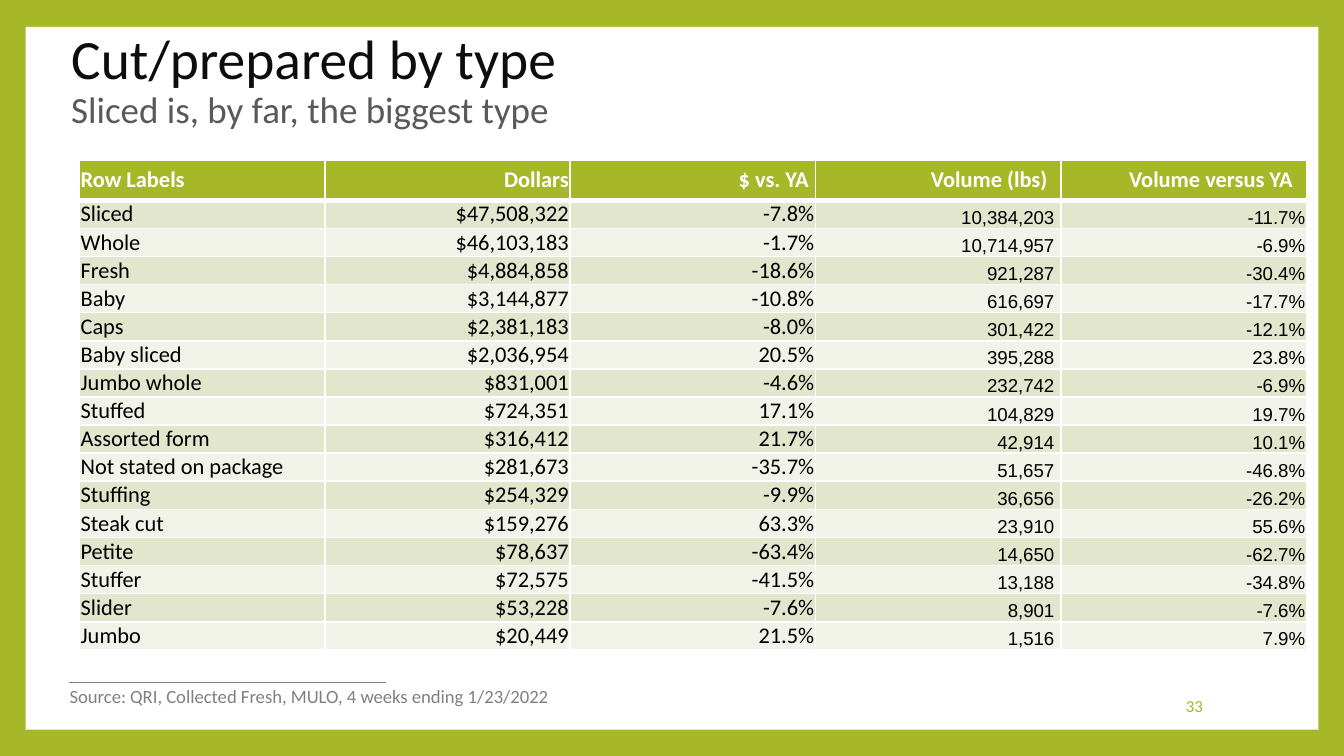
from lxml.etree import SubElement
from pptx import Presentation
from pptx.dml.color import RGBColor
from pptx.enum.shapes import MSO_CONNECTOR, MSO_SHAPE
from pptx.enum.text import MSO_ANCHOR, MSO_AUTO_SIZE, PP_ALIGN
from pptx.oxml.ns import qn
from pptx.util import Inches, Pt

COLORS = {
    "green": "A6B727",
    "white": "FFFFFF",
    "title": "0D0D0D",
    "subtitle": "595959",
    "source": "808080",
    "body": "000000",
    "odd_row": "E1E6CD",
    "even_row": "F1F3E8",
}

HEADERS = ["Row Labels", "Dollars", "$ vs. YA", "Volume (lbs)", "Volume versus YA"]
TYPES = [
    ("Sliced", "$47,508,322", "-7.8%", "10,384,203", "-11.7%"),
    ("Whole", "$46,103,183", "-1.7%", "10,714,957", "-6.9%"),
    ("Fresh", "$4,884,858", "-18.6%", "921,287", "-30.4%"),
    ("Baby", "$3,144,877", "-10.8%", "616,697", "-17.7%"),
    ("Caps", "$2,381,183", "-8.0%", "301,422", "-12.1%"),
    ("Baby sliced", "$2,036,954", "20.5%", "395,288", "23.8%"),
    ("Jumbo whole", "$831,001", "-4.6%", "232,742", "-6.9%"),
    ("Stuffed", "$724,351", "17.1%", "104,829", "19.7%"),
    ("Assorted form", "$316,412", "21.7%", "42,914", "10.1%"),
    ("Not stated on package", "$281,673", "-35.7%", "51,657", "-46.8%"),
    ("Stuffing", "$254,329", "-9.9%", "36,656", "-26.2%"),
    ("Steak cut", "$159,276", "63.3%", "23,910", "55.6%"),
    ("Petite", "$78,637", "-63.4%", "14,650", "-62.7%"),
    ("Stuffer", "$72,575", "-41.5%", "13,188", "-34.8%"),
    ("Slider", "$53,228", "-7.6%", "8,901", "-7.6%"),
    ("Jumbo", "$20,449", "21.5%", "1,516", "7.9%"),
]
VOLUME_COLUMN = 3
HEADER_RIGHT_INSETS = [0.01, 0.01, 0.05, 0.1, 0.1]
BODY_RIGHT_INSETS = [0.01, 0.01, 0.01, 0.05, 0.01]
TABLE_WIDTH, TABLE_HEIGHT, HEADER_HEIGHT = 9.13, 3.65, 0.3
SLIDE_WIDTH = 10


def rgb(color):
    return RGBColor.from_string(COLORS[color])


def add_run(paragraph, text, size, color, font="Calibri", bold=False):
    run = paragraph.add_run()
    run.text = text
    run.font.size = Pt(size)
    run.font.name = font
    run.font.bold = bold
    run.font.color.rgb = rgb(color)


def add_panel(slide):
    """Set the green background and lay the white page on it."""
    slide.background.fill.solid()
    slide.background.fill.fore_color.rgb = rgb("green")
    panel = slide.shapes.add_shape(
        MSO_SHAPE.RECTANGLE, Inches(0.19), Inches(0.2), Inches(9.62), Inches(5.23))
    panel.shadow.inherit = False
    panel.fill.solid()
    panel.fill.fore_color.rgb = rgb("white")
    panel.line.fill.background()


def add_source_rule(slide):
    rule = slide.shapes.add_connector(
        MSO_CONNECTOR.STRAIGHT, Inches(0.51), Inches(5.08), Inches(2.87), Inches(5.08))
    rule.line.color.rgb = rgb("source")
    rule.line.width = Pt(0.79)
    SubElement(rule.element.spPr, qn("a:effectLst"))


def fill_title(slide, heading, subheading):
    title = slide.shapes.title
    title.left, title.top = Inches(0.43), Inches(0.21)
    title.width, title.height = Inches(9.45), Inches(0.79)
    slide.shapes.element.append(title.element)  # in front of the white page
    frame = title.text_frame
    frame.auto_size = MSO_AUTO_SIZE.NONE
    frame.vertical_anchor = MSO_ANCHOR.MIDDLE
    paragraph = frame.paragraphs[0]
    paragraph.alignment = PP_ALIGN.LEFT
    paragraph.line_spacing = 0.9
    add_run(paragraph, heading, 29.7, "title")
    paragraph.add_line_break()
    add_run(paragraph, subheading, 19.8, "subtitle")


def add_label(slide, text, box, size, color, align, anchor, grow=False):
    """Add one line of text; with grow the box fits the text and never wraps."""
    frame = slide.shapes.add_textbox(*(Inches(length) for length in box)).text_frame
    frame.word_wrap = not grow
    frame.auto_size = MSO_AUTO_SIZE.SHAPE_TO_FIT_TEXT if grow else MSO_AUTO_SIZE.NONE
    frame.vertical_anchor = anchor
    paragraph = frame.paragraphs[0]
    paragraph.alignment = align
    add_run(paragraph, text, size, color)


def set_borders(cell, top=1, bottom=1):
    """Draw white borders; top and bottom are widths in points."""
    properties = cell._tc.get_or_add_tcPr()
    for side, width in (("L", 1), ("R", 1), ("T", top), ("B", bottom)):
        border = SubElement(properties, qn(f"a:ln{side}"), w=str(Pt(width)))
        fill = SubElement(border, qn("a:solidFill"))
        SubElement(fill, qn("a:srgbClr"), val=COLORS["white"])


def fill_cell(cell, text, row, column):
    is_header = row == 0
    is_volume = column >= VOLUME_COLUMN
    set_borders(cell, top=3 if row == 1 else 1, bottom=3 if is_header else 1)
    cell.fill.solid()
    cell.fill.fore_color.rgb = rgb(
        "green" if is_header else "odd_row" if row % 2 else "even_row")
    cell.margin_left = Inches(0.01)
    right_insets = HEADER_RIGHT_INSETS if is_header else BODY_RIGHT_INSETS
    cell.margin_right = Inches(right_insets[column])
    cell.margin_top = cell.margin_bottom = 0
    cell.vertical_anchor = (
        MSO_ANCHOR.BOTTOM if is_volume and not is_header else MSO_ANCHOR.MIDDLE)
    paragraph = cell.text_frame.paragraphs[0]
    paragraph.alignment = PP_ALIGN.RIGHT if column else PP_ALIGN.LEFT
    if is_header:
        add_run(paragraph, text, 12, "white", bold=True)
    elif is_volume:
        add_run(paragraph, text, 10, "body", font="Arial")
    else:
        add_run(paragraph, text, 12, "body")


def add_sales_table(slide):
    records = [HEADERS, *TYPES]
    table = slide.shapes.add_table(
        len(records), len(HEADERS), Inches(0.59), Inches(1.19),
        Inches(TABLE_WIDTH), Inches(TABLE_HEIGHT)).table
    for column in table.columns:
        column.width = Inches(TABLE_WIDTH / len(HEADERS))
    body_height = (TABLE_HEIGHT - HEADER_HEIGHT) / len(TYPES)
    for row, record in enumerate(records):
        table.rows[row].height = Inches(body_height if row else HEADER_HEIGHT)
        for column, text in enumerate(record):
            fill_cell(table.cell(row, column), text, row, column)


def main():
    presentation = Presentation()
    presentation.slide_width = Inches(SLIDE_WIDTH)
    presentation.slide_height = Inches(SLIDE_WIDTH * 9 / 16)
    slide = presentation.slides.add_slide(presentation.slide_layouts[5])
    add_panel(slide)
    add_source_rule(slide)
    fill_title(slide, "Cut/prepared by type", "Sliced is, by far, the biggest type")
    add_label(slide, "33", (7.65, 5.1, 1.4, 0.3), 9, "green",
              PP_ALIGN.RIGHT, MSO_ANCHOR.MIDDLE)
    add_label(slide, "Source: QRI, Collected Fresh, MULO, 4 weeks ending 1/23/2022",
              (0.42, 5.05, 3.84, 0.27), 10, "source",
              PP_ALIGN.LEFT, MSO_ANCHOR.TOP, grow=True)
    add_sales_table(slide)
    presentation.save("out.pptx")


if __name__ == "__main__":
    main()
